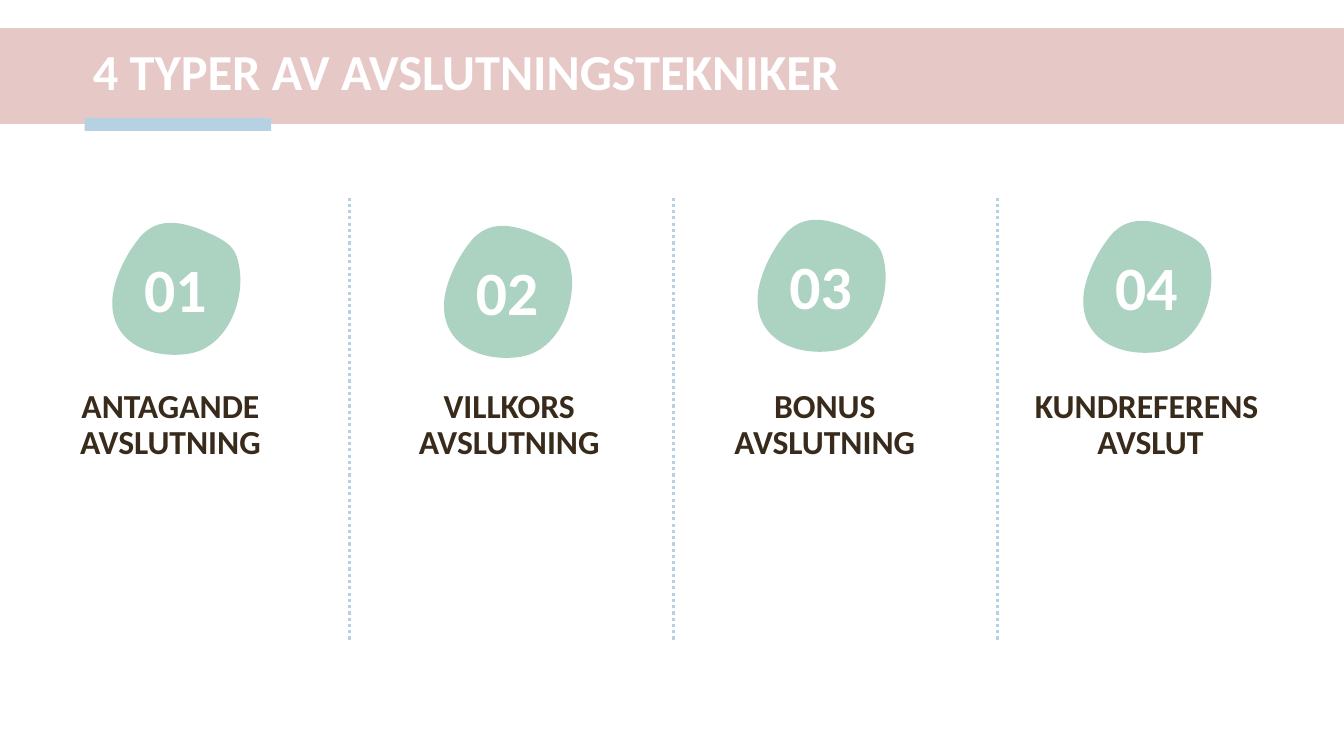
"""Build a slide with four numbered closing techniques."""
from dataclasses import dataclass
from typing import Any

from lxml.etree import SubElement
from pptx import Presentation
from pptx.dml.color import RGBColor
from pptx.enum.dml import MSO_LINE
from pptx.enum.shapes import MSO_CONNECTOR, MSO_SHAPE
from pptx.enum.text import MSO_ANCHOR, MSO_AUTO_SIZE, PP_ALIGN
from pptx.oxml.ns import qn
from pptx.util import Emu, Pt

SCALE = 9144
PINK, BLUE, GREEN = "E6C8C7", "B6D1E1", "94C7B0"
WHITE, BROWN = "FFFFFF", "382B1B"
Point = tuple[int, int]
START: Point = (77, 3)
CURVES: list[tuple[Point, Point, Point]] = [
    ((60, -2), (43, -2), (29, 13)),
    ((16, 28), (4, 51), (1, 71)),
    ((-5, 116), (35, 136), (76, 130)),
    ((116, 124), (136, 71), (124, 34)),
    ((120, 22), (110, 17), (100, 12)),
    ((93, 9), (85, 5), START),
]


@dataclass
class Column:
    label: str
    left: int
    blob_x: int
    blob_y: int


COLUMNS = [
    Column("ANTAGANDE AVSLUTNING", 23, 111, 221),
    Column("VILLKORS AVSLUTNING", 359, 440, 224),
    Column("BONUS AVSLUTNING", 672, 751, 218),
    Column("KUNDREFERENS \vAVSLUT", 995, 1074, 219),
]


def px(length: int) -> Emu:
    return Emu(length * SCALE)


def color(code: str) -> RGBColor:
    return RGBColor.from_string(code)


def paint(shape: Any, code: str) -> None:
    shape.shadow.inherit = False
    shape.fill.solid()
    shape.fill.fore_color.rgb = color(code)
    shape.line.fill.background()


def write(shape: Any, text: str, size: int, code: str, form: dict[str, Any]) -> None:
    frame = shape.text_frame
    frame.word_wrap = True
    frame.auto_size = MSO_AUTO_SIZE.NONE
    frame.text = text
    for line in frame.paragraphs:
        for name, value in form.items():
            setattr(line, name, value)
        for run in line.runs:
            for name, value in {"name": "Calibri", "size": Pt(size), "bold": True}.items():
                setattr(run.font, name, value)
            run.font.color.rgb = color(code)


def draw_title(slide: Any) -> None:
    title = slide.shapes.title
    for box, code in (((0, 28, 1333, 95), PINK), ((84, 117, 185, 13), BLUE)):
        bar = slide.shapes.add_shape(MSO_SHAPE.RECTANGLE, *map(px, box))
        paint(bar, code)
        title.element.addprevious(bar.element)
    place = {"left": 82, "top": 34, "width": 1193, "height": 79}
    for name, value in place.items():
        setattr(title, name, px(value))
    form = {"alignment": PP_ALIGN.LEFT, "line_spacing": 0.9}
    write(title, "4 TYPER AV AVSLUTNINGSTEKNIKER", 36, WHITE, form)
    title.text_frame.vertical_anchor = MSO_ANCHOR.MIDDLE


def add_step(trail: Any, kind: str, points: tuple[Point, ...]) -> None:
    step = SubElement(trail, qn(kind))
    for x, y in points:
        SubElement(step, qn("a:pt"), x=str(x), y=str(y))


def draw_blob(group: Any, x: int, y: int) -> None:
    pen = group.shapes.build_freeform(x, y, scale=SCALE)
    pen.add_line_segments([(x + 127, y + 131)])
    blob = pen.convert_to_shape()
    paint(blob, GREEN)
    tint = blob.element.spPr.find(qn("a:solidFill"))[0]
    SubElement(tint, qn("a:alpha"), val="77000")
    trail = next(blob.element.iter(qn("a:path")))
    for step in list(trail):
        trail.remove(step)
    add_step(trail, "a:moveTo", (START,))
    for curve in CURVES:
        add_step(trail, "a:cubicBezTo", curve)
    SubElement(trail, qn("a:close"))


def draw_column(slide: Any, index: int, column: Column) -> None:
    label = slide.shapes.add_textbox(*map(px, (column.left, 381, 292, 242)))
    form = {"alignment": PP_ALIGN.CENTER, "line_spacing": Pt(25.8)}
    write(label, column.label, 24, BROWN, form)
    group = slide.shapes.add_group_shape()
    draw_blob(group, column.blob_x, column.blob_y)
    number = group.shapes.add_textbox(
        *map(px, (column.blob_x, column.blob_y + 64, 126, 105)))
    form = {"alignment": PP_ALIGN.CENTER, "line_spacing": Pt(23.4)}
    write(number, f"{index:02}", 44, WHITE, form)


def draw_rule(slide: Any, x: int) -> None:
    rule = slide.shapes.add_connector(
        MSO_CONNECTOR.STRAIGHT, *map(px, (x, 196, x, 635)))
    rule.line.color.rgb = color(BLUE)
    rule.line.width = Pt(2.25)
    rule.line.dash_style = MSO_LINE.ROUND_DOT
    SubElement(rule.element.spPr, qn("a:effectLst"))


def main() -> None:
    deck = Presentation()
    deck.slide_width, deck.slide_height = px(1333), px(750)
    slide = deck.slides.add_slide(deck.slide_layouts[5])
    draw_title(slide)
    for index, column in enumerate(COLUMNS, 1):
        draw_column(slide, index, column)
    for gap in range(len(COLUMNS) - 1):
        draw_rule(slide, 347 + 321 * gap)
    deck.save("out.pptx")


if __name__ == "__main__":
    main()
